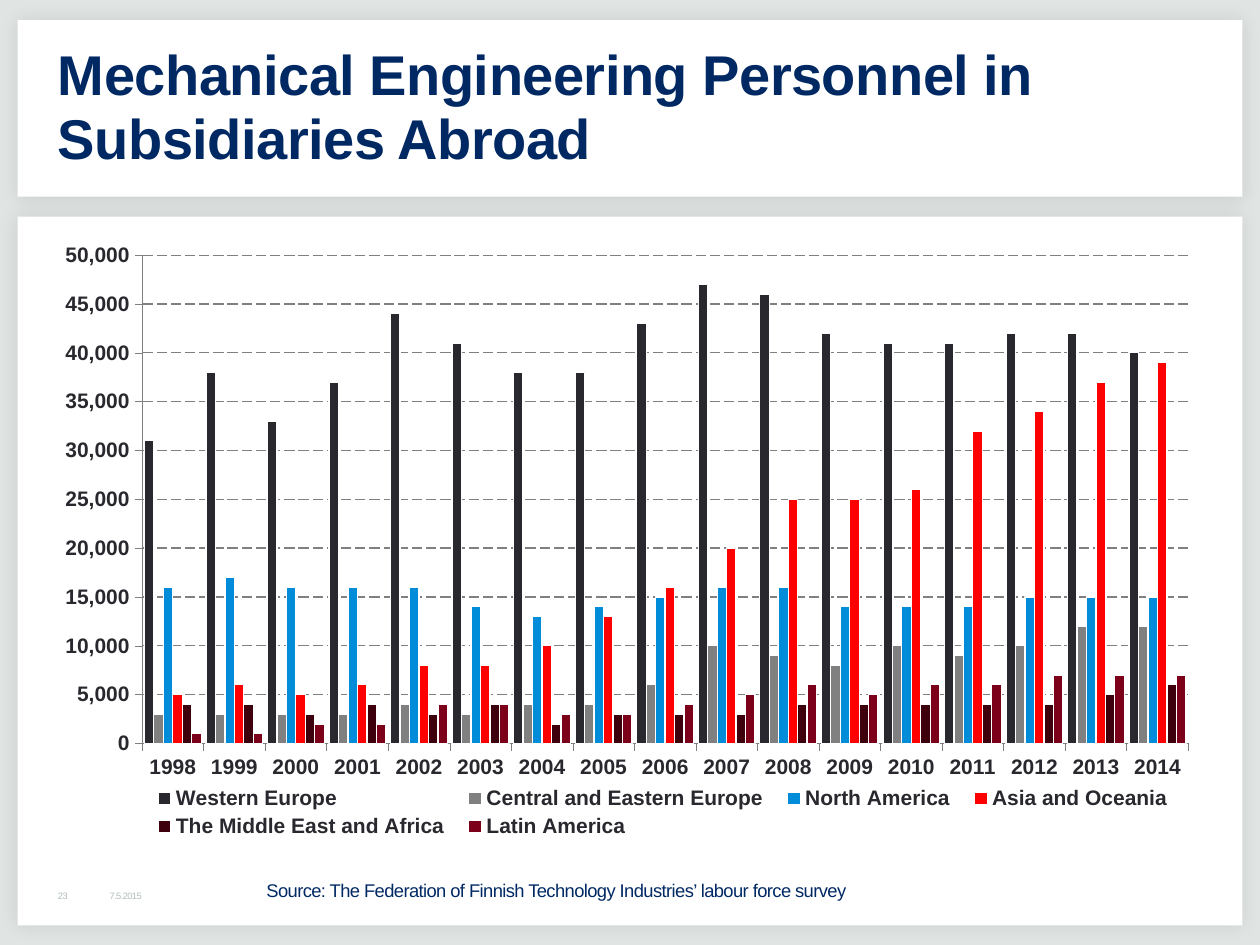
from dataclasses import dataclass

from lxml.etree import SubElement
from pptx import Presentation
from pptx.chart.data import CategoryChartData
from pptx.dml.color import RGBColor
from pptx.enum.chart import XL_CHART_TYPE, XL_LEGEND_POSITION, XL_TICK_MARK
from pptx.enum.dml import MSO_LINE
from pptx.enum.shapes import MSO_SHAPE
from pptx.enum.text import MSO_ANCHOR, MSO_AUTO_SIZE, PP_ALIGN
from pptx.oxml import parse_xml
from pptx.oxml.ns import nsdecls, qn
from pptx.util import Inches, Pt

TITLE = "Mechanical Engineering Personnel in Subsidiaries Abroad"
SOURCE = "Source: The Federation of Finnish Technology Industries’ labour force survey"
DATE = "7.5.2015"
NUMBER = "23"
YEARS = range(1998, 2015)
THOUSANDS = [
    ("Western Europe", "29282E",
     [31, 38, 33, 37, 44, 41, 38, 38, 43, 47, 46, 42, 41, 41, 42, 42, 40]),
    ("Central and Eastern Europe", "808080",
     [3, 3, 3, 3, 4, 3, 4, 4, 6, 10, 9, 8, 10, 9, 10, 12, 12]),
    ("North America", "008CD9",
     [16, 17, 16, 16, 16, 14, 13, 14, 15, 16, 16, 14, 14, 14, 15, 15, 15]),
    ("Asia and Oceania", "FF0000",
     [5, 6, 5, 6, 8, 8, 10, 13, 16, 20, 25, 25, 26, 32, 34, 37, 39]),
    ("The Middle East and Africa", "3E000D",
     [4, 4, 3, 4, 3, 4, 2, 3, 3, 3, 4, 4, 4, 4, 4, 5, 6]),
    ("Latin America", "7D001B",
     [1, 1, 2, 2, 4, 4, 3, 3, 4, 5, 6, 5, 6, 6, 7, 7, 7]),
]


@dataclass(frozen=True)
class Theme:
    font: str = "Arial"
    backdrop: str = "E0E5E3"
    panel: str = "FFFFFF"
    navy: str = "002964"
    ink: str = "29282E"
    axis: str = "808080"
    faint: str = "B1BEB9"
    title: float = 32
    chart: float = 12
    source: float = 10.5
    small: float = 5.3
    spacing: str = "-30"
    rule: float = 0.75
    hairline: float = 0.25


T = Theme()
PANELS = [(1.4, 2.13, 97.2, 18.7), (1.4, 22.93, 97.2, 75)]
TITLE_BOX = (4.2, 4.23, 91.7, 14.53)
CHART_BOX = (2.8, 25.2, 93.1, 64.67)
PLOT = {"x": 0.091, "y": 0.028, "w": 0.892, "h": 0.799}
LEGEND = {"x": 0.09, "y": 0.89, "w": 0.89, "h": 0.1}
NOTES = [
    (DATE, (8.3, 93.73, 12.5, 2.13), T.small, T.faint, 0.04, MSO_ANCHOR.MIDDLE),
    (NUMBER, (4.2, 93.73, 4.1, 2.13), T.small, T.faint, 0.04, MSO_ANCHOR.MIDDLE),
    (SOURCE, (20.85, 92.63, 59, 3.33), T.source, T.navy, 0.03, MSO_ANCHOR.TOP),
]

prs = Presentation()
prs.slide_width, prs.slide_height = Inches(10), Inches(7.5)


def rgb(code):
    return RGBColor.from_string(code)


def place(box):
    sides = (prs.slide_width, prs.slide_height) * 2
    return [round(side * share / 100) for side, share in zip(sides, box)]


def style(font, size, color, bold=False):
    font.name, font.size, font.bold = T.font, Pt(size), bold
    font.color.rgb = rgb(color)


def write(sp, text, size, color, insets, anchor, bold=False):
    tf = sp.text_frame
    tf.word_wrap, tf.auto_size = True, MSO_AUTO_SIZE.NONE
    tf.vertical_anchor = anchor
    (tf.margin_left, tf.margin_top,
     tf.margin_right, tf.margin_bottom) = map(Inches, insets)
    p = tf.paragraphs[0]
    p.text, p.alignment = text, PP_ALIGN.LEFT
    style(p.font, size, color, bold)
    p.font._element.set("spc", T.spacing)
    return p


def add_panel(s, box):
    sp = s.shapes.add_shape(MSO_SHAPE.RECTANGLE, *place(box))
    sp.fill.solid()
    sp.fill.fore_color.rgb = rgb(T.panel)
    sp.line.fill.background()
    sp.shadow.inherit = False
    shadow = SubElement(sp._element.spPr.find(qn("a:effectLst")), qn("a:outerShdw"),
                        blurRad=str(Pt(10)), dist="0", dir="2700000")
    color = SubElement(shadow, qn("a:srgbClr"), val="000000")
    SubElement(color, qn("a:alpha"), val="10000")


def set_layout(parent, index, shares, target=""):
    for old in parent.findall(qn("c:layout")):
        parent.remove(old)
    modes = f'{target}<c:xMode val="edge"/><c:yMode val="edge"/>'
    sizes = "".join(f'<c:{key} val="{share}"/>' for key, share in shares.items())
    parent.insert(index, parse_xml(
        f'<c:layout {nsdecls("c")}><c:manualLayout>{modes}{sizes}'
        "</c:manualLayout></c:layout>"))


def add_chart(s):
    data = CategoryChartData(number_format="#,##0")
    data.categories = [str(year) for year in YEARS]
    for name, _, values in THOUSANDS:
        data.add_series(name, [value * 1000 for value in values])
    chart = s.shapes.add_chart(
        XL_CHART_TYPE.COLUMN_CLUSTERED, *place(CHART_BOX), data).chart
    chart.has_title = False
    style(chart.font, T.chart, T.ink, True)
    plot = chart.plots[0]
    plot.gap_width, plot.overlap, plot.vary_by_categories = 50, 0, False
    for ser, (_, color, _) in zip(plot.series, THOUSANDS):
        ser.format.fill.solid()
        ser.format.fill.fore_color.rgb = rgb(color)
        ser.format.line.color.rgb = rgb(T.panel)
        ser.format.line.width = Pt(T.rule)

    val = chart.value_axis
    val.minimum_scale, val.maximum_scale, val.major_unit = 0, 50000, 5000
    val.has_major_gridlines = True
    val.tick_labels.number_format = "#,##0"
    val.tick_labels.number_format_is_linked = False
    grid = val.major_gridlines.format.line
    grid.color.rgb, grid.width = rgb(T.axis), Pt(T.rule)
    grid.dash_style = MSO_LINE.LONG_DASH
    for axis in (val, chart.category_axis):
        line = axis.format.line
        line.color.rgb, line.width = rgb(T.axis), Pt(T.hairline)
        axis.major_tick_mark = XL_TICK_MARK.OUTSIDE
        style(axis.tick_labels.font, T.chart, T.ink, True)

    chart.has_legend = True
    chart.legend.position = XL_LEGEND_POSITION.BOTTOM
    chart.legend.include_in_layout = False
    style(chart.legend.font, T.chart, T.ink, True)

    set_layout(chart._chartSpace.chart.plotArea, 0, PLOT,
               '<c:layoutTarget val="inner"/>')
    set_layout(chart.legend._element, 1, LEGEND)


def main():
    s = prs.slides.add_slide(prs.slide_layouts[5])
    s.background.fill.solid()
    s.background.fill.fore_color.rgb = rgb(T.backdrop)
    for box in PANELS:
        add_panel(s, box)

    title = s.shapes.title
    s.shapes._spTree.append(title._element)
    title.left, title.top, title.width, title.height = place(TITLE_BOX)
    p = write(title, TITLE, T.title, T.navy, (0.04, 0.05, 0.1, 0.05),
              MSO_ANCHOR.MIDDLE, True)
    p.line_spacing = 0.95

    add_chart(s)
    for text, box, size, color, inset, anchor in NOTES:
        write(s.shapes.add_textbox(*place(box)), text, size, color,
              [inset] * 4, anchor)
    prs.save("out.pptx")


if __name__ == "__main__":
    main()
